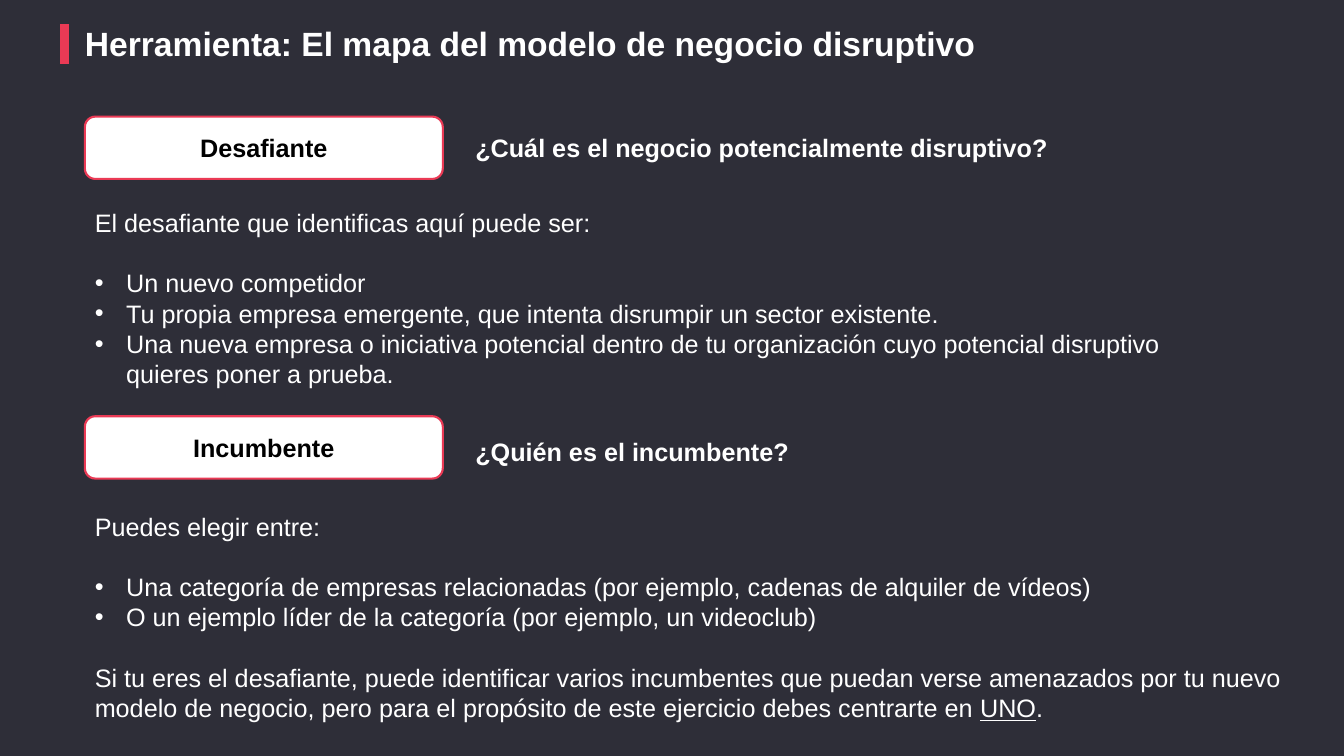
import dataclasses
import typing

import lxml.etree
import pptx
import pptx.dml.color
import pptx.enum.shapes
import pptx.enum.text
import pptx.oxml.ns
import pptx.util

Cm = pptx.util.Cm
Pt = pptx.util.Pt
RGB = pptx.dml.color.RGBColor


@dataclasses.dataclass(frozen=True)
class Theme:
    font: str = "Arial"
    background: RGB = RGB(0x2E, 0x2E, 0x38)
    accent: RGB = RGB(0xEA, 0x3A, 0x55)
    light: RGB = RGB(0xFF, 0xFF, 0xFF)
    dark: RGB = RGB(0x00, 0x00, 0x00)
    title_size: int = 24
    body_size: int = 18
    gap: float = 21.6


@dataclasses.dataclass(frozen=True)
class Frame:
    left: float
    top: float
    width: float
    height: float

    def lengths(self) -> list[pptx.util.Length]:
        return [Cm(value) for value in dataclasses.astuple(self)]


@dataclasses.dataclass(frozen=True)
class Line:
    text: str
    bullet: bool = False
    gap: bool = False
    underlined: str = ""
    ending: str = ""


@dataclasses.dataclass(frozen=True)
class Section:
    label: str
    label_top: float
    question: str
    question_top: float
    body: Frame
    lines: tuple[Line, ...]


THEME = Theme()
LEFT = 2.14
SECTIONS = (
    Section(
        "Desafiante", 2.94, "¿Cuál es el negocio potencialmente disruptivo?", 3.22,
        Frame(LEFT, 5.1, 28.17, 4.88),
        (
            Line("El desafiante que identificas aquí puede ser:"),
            Line("Un nuevo competidor", bullet=True, gap=True),
            Line("Tu propia empresa emergente, que intenta disrumpir un sector existente.", bullet=True),
            Line("Una nueva empresa o iniciativa potencial dentro de tu organización cuyo potencial "
                 "disruptivo quieres poner a prueba.", bullet=True),
        ),
    ),
    Section(
        "Incumbente", 10.49, "¿Quién es el incumbente?", 10.87,
        Frame(LEFT, 12.75, 30.51, 5.64),
        (
            Line("Puedes elegir entre:"),
            Line("Una categoría de empresas relacionadas (por ejemplo, cadenas de alquiler de vídeos)",
                 bullet=True, gap=True),
            Line("O un ejemplo líder de la categoría (por ejemplo, un videoclub)", bullet=True),
            Line("Si tu eres el desafiante, puede identificar varios incumbentes que puedan verse "
                 "amenazados por tu nuevo modelo de negocio, pero para el propósito de este ejercicio "
                 "debes centrarte en ", gap=True, underlined="UNO", ending="."),
        ),
    ),
)


def apply(target: typing.Any, values: dict[str, typing.Any]) -> None:
    for name, value in values.items():
        setattr(target, name, value)


def add_span(para: typing.Any, text: str, color: RGB, **values: typing.Any) -> None:
    span = para.add_run()
    span.text = text
    apply(span.font, {"name": THEME.font, "size": Pt(THEME.body_size), **values})
    span.font.color.rgb = color


def add_bullet(para: typing.Any) -> None:
    properties = para._p.get_or_add_pPr()
    for name, value in {"marL": Cm(0.79), "indent": -Cm(0.79)}.items():
        properties.set(name, str(int(value)))
    for tag, name, value in (("a:buFont", "typeface", THEME.font), ("a:buChar", "char", "•")):
        lxml.etree.SubElement(properties, pptx.oxml.ns.qn(tag)).set(name, value)


def add_box(page: typing.Any, frame: Frame) -> typing.Any:
    text_frame = page.shapes.add_textbox(*frame.lengths()).text_frame
    apply(text_frame, {"word_wrap": True, "auto_size": pptx.enum.text.MSO_AUTO_SIZE.SHAPE_TO_FIT_TEXT})
    return text_frame


def add_title(page: typing.Any, text: str) -> None:
    bar = page.shapes.add_connector(
        pptx.enum.shapes.MSO_CONNECTOR.STRAIGHT, Cm(1.63), Cm(0.61), Cm(1.63), Cm(1.61))
    bar.line.color.rgb = THEME.accent
    bar.line.width = Pt(6)
    lxml.etree.SubElement(bar._element.spPr, pptx.oxml.ns.qn("a:effectLst"))
    box = add_box(page, Frame(LEFT, 0.64, 26.97, 0.97))
    apply(box, {"margin_left": 0, "margin_top": Cm(0.1), "margin_right": 0, "margin_bottom": 0})
    para = box.paragraphs[0]
    apply(para, {"line_spacing": 0.85, "space_after": Pt(6)})
    add_span(para, text, THEME.light, size=Pt(THEME.title_size), bold=True)


def add_label(page: typing.Any, text: str, top: float) -> None:
    label = page.shapes.add_shape(
        pptx.enum.shapes.MSO_SHAPE.ROUNDED_RECTANGLE, *Frame(LEFT, top, 9.02, 1.57).lengths())
    label.shadow.inherit = False
    label.fill.solid()
    label.fill.fore_color.rgb = THEME.light
    label.line.color.rgb = THEME.accent
    label.line.width = Pt(1.5)
    label.text_frame.vertical_anchor = pptx.enum.text.MSO_ANCHOR.MIDDLE
    para = label.text_frame.paragraphs[0]
    para.alignment = pptx.enum.text.PP_ALIGN.CENTER
    add_span(para, text, THEME.dark, bold=True)


def add_lines(page: typing.Any, frame: Frame, lines: tuple[Line, ...]) -> None:
    box = add_box(page, frame)
    for index, line in enumerate(lines):
        para = box.add_paragraph() if index else box.paragraphs[0]
        if line.bullet:
            add_bullet(para)
        if line.gap:
            para.space_before = Pt(THEME.gap)
        add_span(para, line.text, THEME.light)
        if line.underlined:
            add_span(para, line.underlined, THEME.light, underline=True)
            add_span(para, line.ending, THEME.light)


def add_section(page: typing.Any, section: Section) -> None:
    add_label(page, section.label, section.label_top)
    question = add_box(page, Frame(11.73, section.question_top, 16.94, 1.02))
    add_span(question.paragraphs[0], section.question, THEME.light, bold=True)
    add_lines(page, section.body, section.lines)


def main() -> None:
    """Build the slide on the disruptive business model map."""
    deck = pptx.Presentation()
    apply(deck, {"slide_width": Cm(33.87), "slide_height": Cm(19.05)})
    page = deck.slides.add_slide(deck.slide_layouts[6])
    page.background.fill.solid()
    page.background.fill.fore_color.rgb = THEME.background
    add_title(page, "Herramienta: El mapa del modelo de negocio disruptivo")
    for section in SECTIONS:
        add_section(page, section)
    deck.save("out.pptx")


if __name__ == "__main__":
    main()
